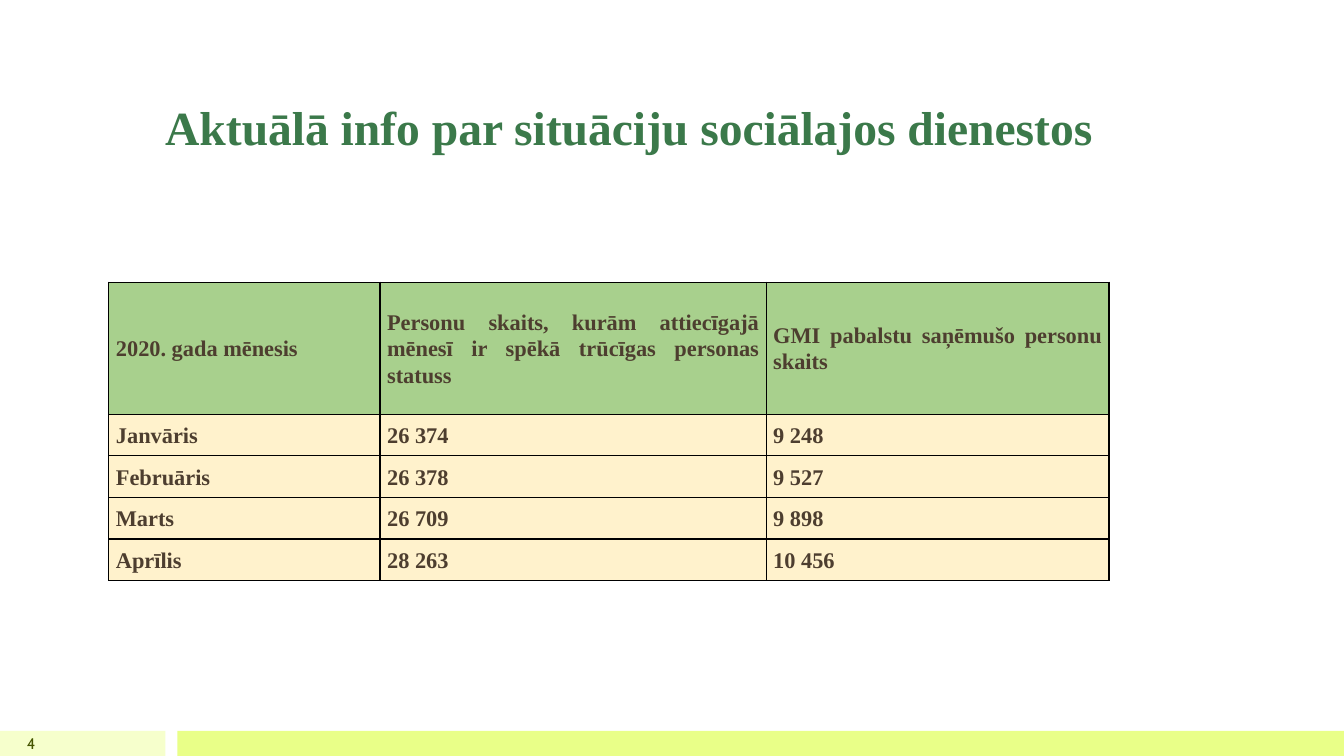
from dataclasses import dataclass

from lxml import etree
from pptx import Presentation
from pptx import util as u
from pptx.dml.color import RGBColor
from pptx.enum import shapes, text
from pptx.oxml import ns

# The grid splits the slide into 100 columns and 100 rows
SLIDE_WIDTH, SLIDE_HEIGHT = u.Inches(13.33), u.Inches(7.5)
FOOTER_TOP, FOOTER_ROWS = 96.67, 3.33


@dataclass
class Area:
    left: float
    top: float
    columns: float
    rows: float

    def box(self) -> tuple:
        return (across(self.left), down(self.top),
                across(self.columns), down(self.rows))


@dataclass
class Bar:
    area: Area
    fill: str


@dataclass
class Label:
    area: Area
    wording: str
    font: dict
    color: str
    anchor: text.MSO_ANCHOR
    paragraph: dict


def across(columns: float) -> int:
    return round(SLIDE_WIDTH * columns / 100)


def down(rows: float) -> int:
    return round(SLIDE_HEIGHT * rows / 100)


def color(value: str) -> RGBColor:
    return RGBColor.from_string(value)


def apply(target, values: dict) -> None:
    for name, value in values.items():
        setattr(target, name, value)


BARS = [
    Bar(Area(0, FOOTER_TOP, 12.3, FOOTER_ROWS), "F6FFCC"),
    Bar(Area(13.2, FOOTER_TOP, 86.8, FOOTER_ROWS), "E9FF88"),
]

LABELS = [
    Label(Area(11.55, 4, 76.9, 17.2),
          "Aktuālā info par situāciju sociālajos dienestos",
          {"name": "Times New Roman", "size": u.Pt(34), "bold": True},
          "3B794A", text.MSO_ANCHOR.BOTTOM,
          {"alignment": text.PP_ALIGN.LEFT}),
    Label(Area(0, FOOTER_TOP, 3.38, FOOTER_ROWS), "4",
          {"name": "Cabin", "size": u.Pt(11)},
          "455500", text.MSO_ANCHOR.MIDDLE,
          {"alignment": text.PP_ALIGN.RIGHT}),
]

TABLE_COLUMNS = [20.18, 28.73, 25.51]
TABLE_ROWS = [17.47] + [5.5] * 4
TABLE_AREA = Area(8.1, 37.33, sum(TABLE_COLUMNS), sum(TABLE_ROWS))
TABLE_CONTENT = [
    ("2020. gada mēnesis",
     "Personu skaits, kurām attiecīgajā mēnesī ir spēkā trūcīgas personas statuss",
     "GMI pabalstu saņēmušo personu skaits"),
    ("Janvāris", "26 374", "9 248"),
    ("Februāris", "26 378", "9 527"),
    ("Marts", "26 709", "9 898"),
    ("Aprīlis", "28 263", "10 456"),
]
HEADER_FILL, MONTH_FILL = "A8D08D", "FFF2CC"
CELL_FORMAT = {
    "margin_left": u.Inches(0.07), "margin_right": u.Inches(0.07),
    "margin_top": 0, "margin_bottom": 0,
    "vertical_anchor": text.MSO_ANCHOR.MIDDLE,
}
CELL_PARAGRAPH = {"alignment": text.PP_ALIGN.JUSTIFY,
                  "line_spacing": 1.07, "space_after": u.Pt(8)}
CELL_FONT = {"name": "Times New Roman", "size": u.Pt(16), "bold": True}
CELL_COLOR, BORDER_COLOR = "4D3E2F", "000000"


def write(paragraph, wording: str, font: dict, ink: str, layout: dict) -> None:
    apply(paragraph, layout)
    run = paragraph.add_run()
    run.text = wording
    apply(run.font, font)
    run.font.color.rgb = color(ink)


def draw_bar(slide, bar: Bar) -> None:
    shape = slide.shapes.add_shape(shapes.MSO_SHAPE.RECTANGLE, *bar.area.box())
    shape.shadow.inherit = False
    shape.fill.solid()
    shape.fill.fore_color.rgb = color(bar.fill)
    shape.line.fill.background()


def draw_label(slide, label: Label) -> None:
    frame = slide.shapes.add_textbox(*label.area.box()).text_frame
    apply(frame, {"word_wrap": True, "vertical_anchor": label.anchor})
    write(frame.paragraphs[0], label.wording, label.font, label.color,
          label.paragraph)


def add_borders(cell) -> None:
    properties = cell._tc.get_or_add_tcPr()
    for position, side in enumerate(("a:lnL", "a:lnR", "a:lnT", "a:lnB")):
        line = etree.Element(ns.qn(side), w=str(u.Pt(1)))
        fill = etree.SubElement(line, ns.qn("a:solidFill"))
        etree.SubElement(fill, ns.qn("a:srgbClr"), val=BORDER_COLOR)
        properties.insert(position, line)


def draw_table(slide) -> None:
    table = slide.shapes.add_table(len(TABLE_ROWS), len(TABLE_COLUMNS),
                                   *TABLE_AREA.box()).table
    for column, width in zip(table.columns, TABLE_COLUMNS):
        column.width = across(width)
    for row, height in zip(table.rows, TABLE_ROWS):
        row.height = down(height)
    for row_index, wordings in enumerate(TABLE_CONTENT):
        for column_index, wording in enumerate(wordings):
            cell = table.cell(row_index, column_index)
            apply(cell, CELL_FORMAT)
            cell.fill.solid()
            cell.fill.fore_color.rgb = color(MONTH_FILL if row_index else HEADER_FILL)
            add_borders(cell)
            write(cell.text_frame.paragraphs[0], wording, CELL_FONT,
                  CELL_COLOR, CELL_PARAGRAPH)


def main() -> None:
    presentation = Presentation()
    apply(presentation, {"slide_width": SLIDE_WIDTH, "slide_height": SLIDE_HEIGHT})
    slide = presentation.slides.add_slide(presentation.slide_layouts[6])

    # Footer bars
    for bar in BARS:
        draw_bar(slide, bar)

    # Monthly figures
    draw_table(slide)

    # Title and page number
    for label in LABELS:
        draw_label(slide, label)

    presentation.save("out.pptx")


if __name__ == "__main__":
    main()
